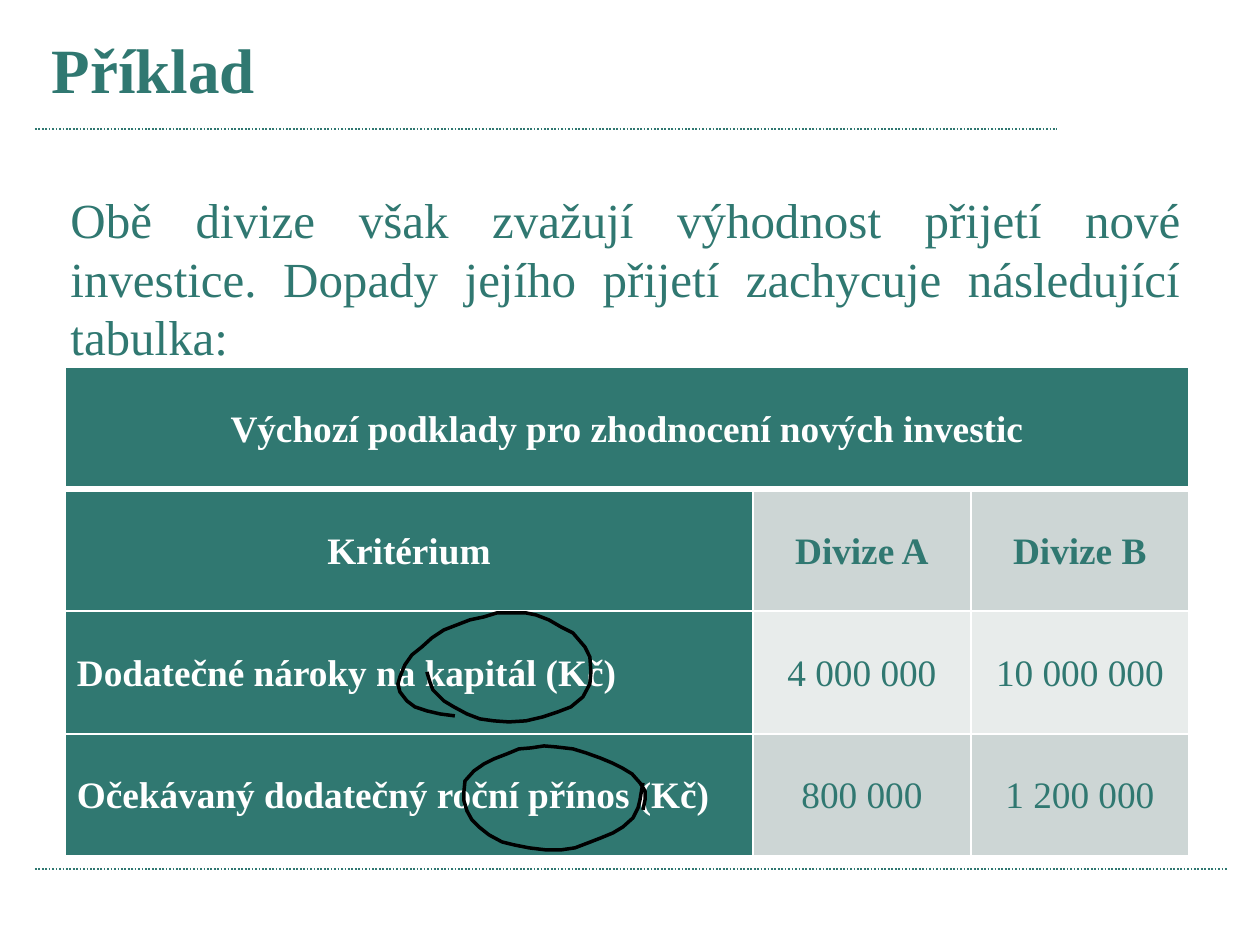
from lxml.etree import SubElement
from pptx import Presentation
from pptx.dml.color import RGBColor
from pptx.enum.dml import MSO_LINE
from pptx.enum.shapes import MSO_CONNECTOR
from pptx.enum.text import MSO_ANCHOR, PP_ALIGN
from pptx.oxml.ns import qn
from pptx.util import Emu, Pt

EMU_PER_PX = 914400 / 168
TEAL = RGBColor(0x30, 0x78, 0x71)
WHITE = RGBColor(0xFF, 0xFF, 0xFF)
BLACK = RGBColor(0x00, 0x00, 0x00)
BAND_DARK = RGBColor(0xCD, 0xD6, 0xD5)
BAND_LIGHT = RGBColor(0xE8, 0xEC, 0xEB)

TABLE_HEADING = "Výchozí podklady pro zhodnocení nových investic"
CRITERIA = [
    ("Kritérium", "Divize A", "Divize B"),
    ("Dodatečné nároky na kapitál (Kč)", "4 000 000", "10 000 000"),
    ("Očekávaný dodatečný roční přínos (Kč)", "800 000", "1 200 000"),
]
CAPITAL_LOOP = [
    (29, 59), (32, 69), (35, 77), (46, 88), (56, 94), (69, 101), (82, 106),
    (96, 108), (111, 109), (128, 108), (145, 104), (160, 99), (173, 94),
    (185, 84), (192, 71), (193, 59), (192, 44), (187, 34), (175, 20),
    (163, 14), (151, 7), (138, 2), (128, 0), (114, 0), (99, 0), (86, 4),
    (72, 7), (59, 12), (46, 17), (34, 25), (24, 34), (14, 42), (7, 52),
    (2, 64), (0, 71), (2, 79), (9, 88), (17, 94), (29, 98), (42, 101), (57, 103),
]
BENEFIT_LOOP = [
    (179, 64), (181, 54), (181, 45), (176, 37), (168, 28), (158, 22),
    (148, 17), (136, 12), (122, 7), (109, 3), (92, 1), (80, 0), (67, 2),
    (55, 3), (43, 8), (30, 13), (20, 18), (10, 25), (1, 35), (0, 45), (0, 55),
    (3, 65), (8, 74), (15, 81), (25, 89), (38, 96), (50, 99), (65, 102),
    (82, 104), (97, 104), (111, 102), (124, 97), (137, 92), (149, 87),
    (159, 81), (169, 72), (174, 62), (176, 54), (178, 42), (179, 37),
]


def px(length):
    return Emu(round(length * EMU_PER_PX))


def apply(target, values):
    for name, value in values.items():
        setattr(target, name, value)


def write(frame, text, size, color, bold=False, **paragraph_format):
    paragraph = frame.paragraphs[0]
    paragraph.text = text
    apply(paragraph, paragraph_format)
    font = paragraph.runs[0].font
    apply(font, {"name": "Times New Roman", "size": Pt(size), "bold": bold})
    font.color.rgb = color


def place_title(slide, left, top, width, height):
    title = slide.shapes.title
    apply(title, {"left": px(left), "top": px(top),
                  "width": px(width), "height": px(height)})
    apply(title.text_frame, {"vertical_anchor": MSO_ANCHOR.MIDDLE,
                             "word_wrap": True, "margin_bottom": px(18)})
    write(title.text_frame, "Příklad", 27, TEAL, bold=True, alignment=PP_ALIGN.LEFT)


def add_rule(slide, left, top, width):
    rule = slide.shapes.add_connector(
        MSO_CONNECTOR.STRAIGHT, px(left), px(top), px(left + width), px(top))
    rule.line.color.rgb = TEAL
    apply(rule.line, {"width": Pt(0.75), "dash_style": MSO_LINE.ROUND_DOT})
    SubElement(rule._element.spPr, qn("a:effectLst"))


def add_introduction(slide, left, top, width, height):
    introduction = slide.shapes.add_textbox(px(left), px(top), px(width), px(height))
    introduction.text_frame.word_wrap = True
    write(introduction.text_frame,
          "Obě divize však zvažují výhodnost přijetí nové investice. "
          "Dopady jejího přijetí zachycuje následující tabulka:",
          21, TEAL, alignment=PP_ALIGN.JUSTIFY)


def border_cell(cell, bottom_width):
    """Draw white lines on all four sides; call before the fill is set."""
    properties = cell._tc.get_or_add_tcPr()
    for side, width in (("L", 1), ("R", 1), ("T", 1), ("B", bottom_width)):
        line = SubElement(properties, qn(f"a:ln{side}"), w=str(Pt(width)))
        fill = SubElement(line, qn("a:solidFill"))
        SubElement(fill, qn("a:srgbClr"), val=str(WHITE))


def format_cell(cell, text, fill, color, bold, alignment, bottom_width=1):
    border_cell(cell, bottom_width)
    cell.fill.solid()
    cell.fill.fore_color.rgb = fill
    apply(cell, {"vertical_anchor": MSO_ANCHOR.MIDDLE, "margin_left": px(12),
                 "margin_right": px(12), "margin_top": 0, "margin_bottom": 0})
    write(cell.text_frame, text, 16, color, bold,
          alignment=alignment, line_spacing=1.07)


def add_investment_table(slide, left, top, width, height):
    division_width = 218
    row_count = len(CRITERIA) + 1
    table = slide.shapes.add_table(
        row_count, 3, px(left), px(top), px(width), px(height)).table
    column_widths = (width - 2 * division_width, division_width, division_width)
    for column, column_width in zip(table.columns, column_widths):
        column.width = px(column_width)
    for row in table.rows:
        row.height = px(height / row_count)

    heading = table.cell(0, 0)
    heading.merge(table.cell(0, 2))
    format_cell(heading, TABLE_HEADING, TEAL, WHITE, True, PP_ALIGN.CENTER, 3)
    for row_index, (criterion, *amounts) in enumerate(CRITERIA, start=1):
        is_header = row_index == 1
        format_cell(table.cell(row_index, 0), criterion, TEAL, WHITE, True,
                    PP_ALIGN.CENTER if is_header else PP_ALIGN.JUSTIFY)
        band = BAND_DARK if row_index % 2 else BAND_LIGHT
        for column_index, amount in enumerate(amounts, start=1):
            format_cell(table.cell(row_index, column_index), amount, band, TEAL,
                        is_header, PP_ALIGN.CENTER)


def add_pen_loop(slide, left, top, points):
    builder = slide.shapes.build_freeform(*points[0], scale=EMU_PER_PX)
    builder.add_line_segments(points[1:], close=False)
    loop = builder.convert_to_shape(px(left), px(top))
    loop.shadow.inherit = False
    loop.fill.background()
    loop.line.color.rgb = BLACK
    loop.line.width = Pt(1.5)


def main():
    presentation = Presentation()
    apply(presentation, {"slide_width": px(1260), "slide_height": px(945)})
    slide = presentation.slides.add_slide(presentation.slide_layouts[5])
    add_rule(slide, 35, 129, 1022)
    add_rule(slide, 35, 869, 1193)
    place_title(slide, 35, 24, 1110, 99)
    add_introduction(slide, 54, 181, 1144, 254)
    add_investment_table(slide, 65, 367, 1124, 489)
    add_pen_loop(slide, 398, 613, CAPITAL_LOOP)
    add_pen_loop(slide, 464, 746, BENEFIT_LOOP)
    presentation.save("out.pptx")


if __name__ == "__main__":
    main()
